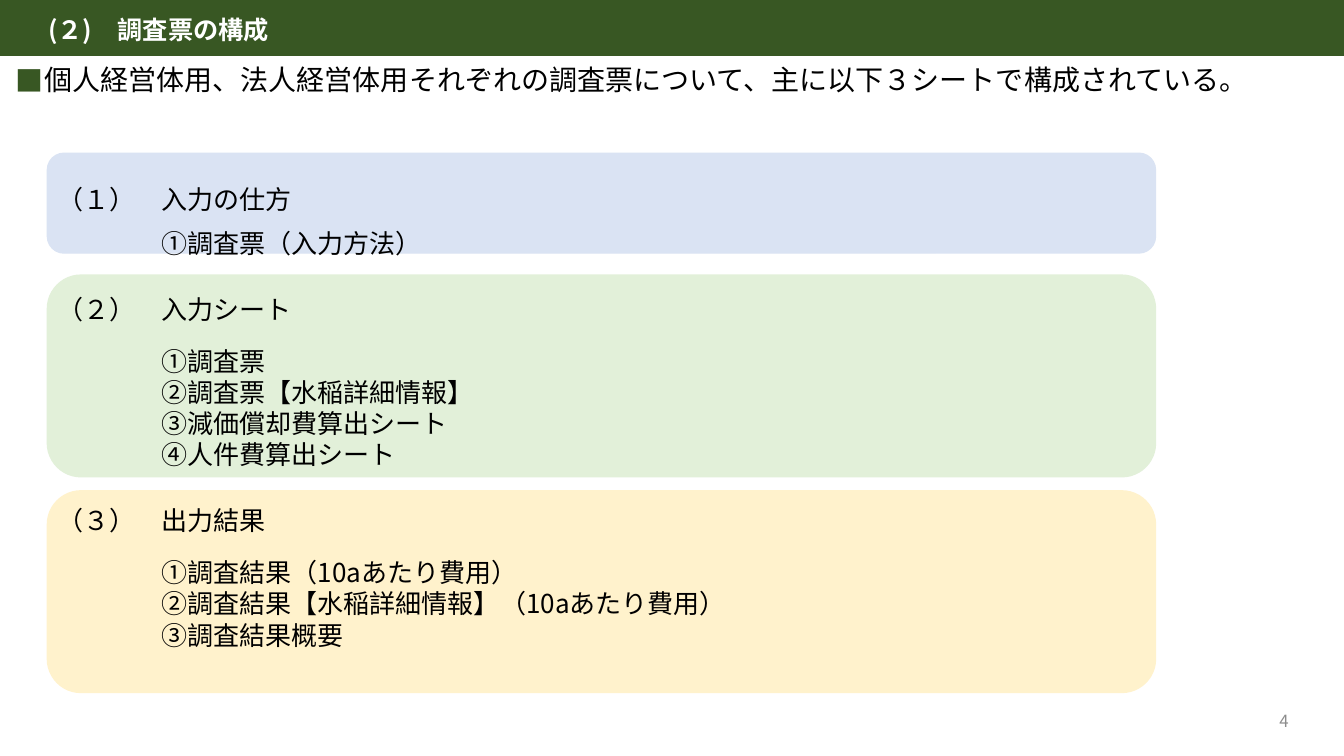
"""Build a slide that lists the three sheets of a survey form."""
from lxml import etree
from pptx import Presentation
from pptx.dml.color import RGBColor
from pptx.enum.shapes import MSO_SHAPE
from pptx.enum.text import MSO_ANCHOR, MSO_AUTO_SIZE, PP_ALIGN
from pptx.oxml.ns import qn
from pptx.util import Inches, Pt

RECTANGLE, ROUNDED = MSO_SHAPE.RECTANGLE, MSO_SHAPE.ROUNDED_RECTANGLE
TOP, MIDDLE = MSO_ANCHOR.TOP, MSO_ANCHOR.MIDDLE
LEFT, RIGHT = PP_ALIGN.LEFT, PP_ALIGN.RIGHT
FONT = "Noto Sans CJK JP"
COLORS = {
    "bar": "385723", "guide": "DAE3F3", "entry": "E2F0D9", "result": "FFF2CC",
    "ink": "000000", "light": "FFFFFF", "number": "8C8C8C",
}
PANEL_LEFT, PANEL_WIDTH = 0.47, 10.99
BODY_SIZE, BODY_LINE = 18.6, 22.3
ITEM_INDENT = 4 * BODY_SIZE


def add_block(kind, left, top, width, height, color):
    """Add a filled shape without shadow."""
    block = page.shapes.add_shape(
        kind, Inches(left), Inches(top), Inches(width), Inches(height))
    block.shadow.inherit = False
    block.fill.solid()
    block.fill.fore_color.rgb = RGBColor.from_string(COLORS[color])
    block.line.color.rgb = RGBColor.from_string(COLORS[color])
    block.line.width = Pt(1)


def write(para, text, size, color, line=None, bold=False, align=LEFT):
    """Fill and format one paragraph."""
    para.text = text
    para.alignment = align
    if line:
        para.line_spacing = Pt(line)
    para.font.size = Pt(size)
    para.font.bold = bold
    para.font.name = FONT
    para.font.color.rgb = RGBColor.from_string(COLORS[color])
    defaults = para._p.pPr.find(qn("a:defRPr"))
    etree.SubElement(defaults, qn("a:ea")).set("typeface", FONT)


deck = Presentation()
deck.slide_width, deck.slide_height = Inches(13.33), Inches(7.5)
page = deck.slides.add_slide(deck.slide_layouts[5])

add_block(RECTANGLE, 0, 0, 13.33, 0.55, "bar")
for top, height, color in [(4.87, 2, "result"), (2.73, 2, "entry"), (1.52, 0.99, "guide")]:
    add_block(ROUNDED, PANEL_LEFT, top, PANEL_WIDTH, height, color)

title = page.shapes.title
title.left, title.top = Inches(0.05), Inches(0.6)
title.width, title.height = Inches(12.84), Inches(0.99)
title.text_frame.vertical_anchor = TOP
title.text_frame.auto_size = MSO_AUTO_SIZE.NONE
title.text_frame.word_wrap = True
lead = title.text_frame.paragraphs[0]
lead_format = lead._p.get_or_add_pPr()
lead_format.set("marL", str(Inches(0.29)))
lead_format.set("indent", str(-Inches(0.29)))
bullet_color = etree.SubElement(lead_format, qn("a:buClr"))
etree.SubElement(bullet_color, qn("a:srgbClr")).set("val", COLORS["bar"])
etree.SubElement(lead_format, qn("a:buFont")).set("typeface", FONT)
etree.SubElement(lead_format, qn("a:buChar")).set("char", "■")
write(lead, "個人経営体用、法人経営体用それぞれの調査票について、主に以下３シートで構成されている。",
      20, "ink", line=22)

number_box = page.shapes.add_textbox(Inches(9.88), Inches(6.95), Inches(3), Inches(0.4))
number_box.text_frame.word_wrap = True
number_box.text_frame.vertical_anchor = MIDDLE
write(number_box.text_frame.paragraphs[0], "4", 12, "number", align=RIGHT)

heading_box = page.shapes.add_textbox(Inches(0.38), Inches(0.08), Inches(4.61), Inches(0.4))
heading_box.text_frame.word_wrap = True
write(heading_box.text_frame.paragraphs[0], "(２)　調査票の構成", 18, "light",
      line=22.5, bold=True)

sheets = [
    ("（１）　入力の仕方", 9.1, ["①調査票（入力方法）"]),
    ("（２）　入力シート", 14.8,
     ["①調査票", "②調査票【水稲詳細情報】", "③減価償却費算出シート", "④人件費算出シート"]),
    ("（３）　出力結果", 14.8,
     ["①調査結果（10aあたり費用）", "②調査結果【水稲詳細情報】（10aあたり費用）", "③調査結果概要"]),
]
body_box = page.shapes.add_textbox(
    Inches(PANEL_LEFT), Inches(1.31), Inches(9.88), Inches(5.36))
body = body_box.text_frame
body.word_wrap = True
body.margin_top = Pt(36.5)
for sheet_index, (heading, gap, items) in enumerate(sheets):
    para = body.add_paragraph() if sheet_index else body.paragraphs[0]
    para.space_before = Pt(24.8 if sheet_index else 0)
    write(para, heading, BODY_SIZE, "ink", line=BODY_LINE)
    for item_index, item in enumerate(items):
        para = body.add_paragraph()
        para.space_before = Pt(0 if item_index else gap)
        para._p.get_or_add_pPr().set("marL", str(Pt(ITEM_INDENT)))
        write(para, item, BODY_SIZE, "ink", line=BODY_LINE)

deck.save("out.pptx")
